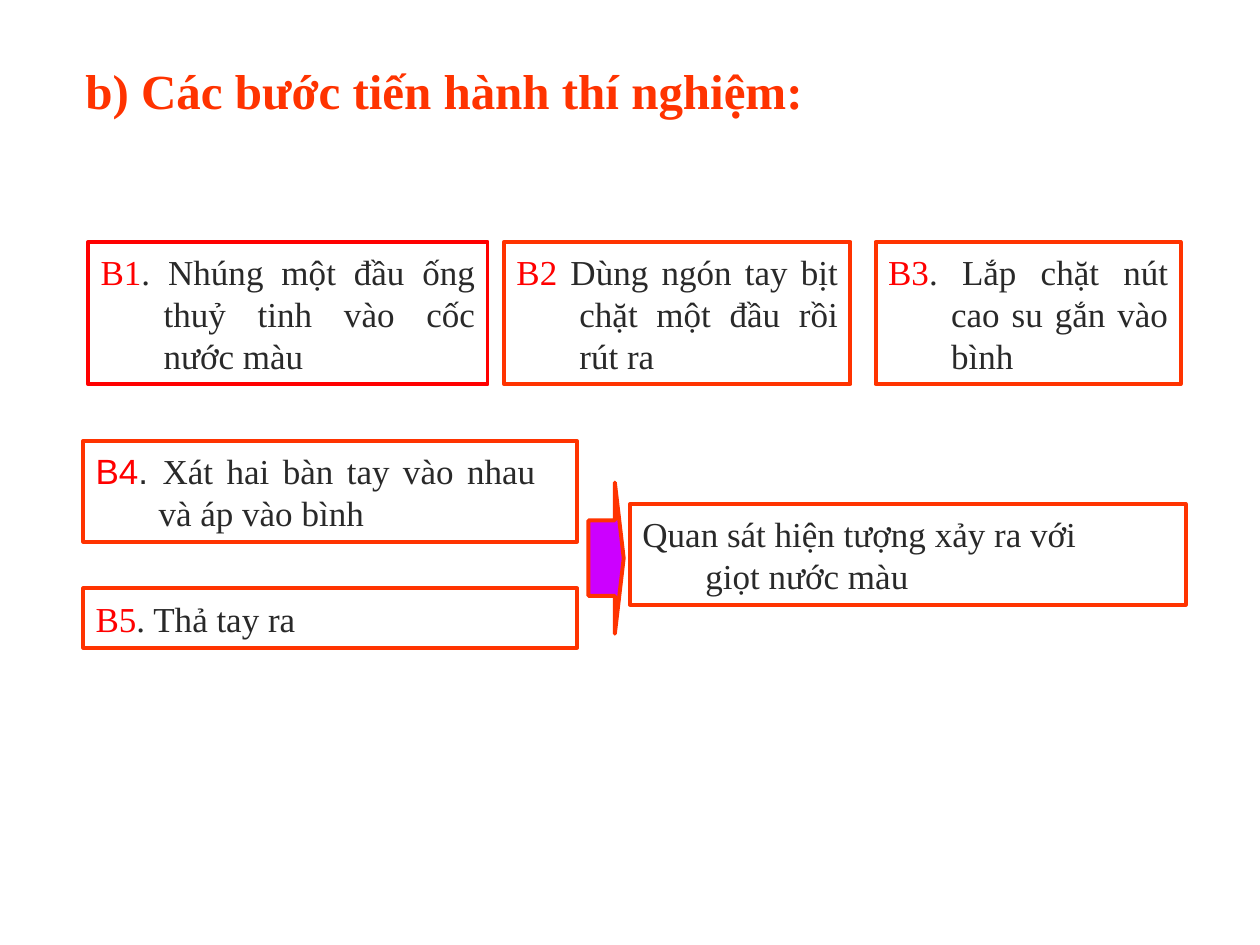
"""Build the slide listing the steps of the experiment."""
from pptx import Presentation
from pptx.dml.color import RGBColor
from pptx.enum.shapes import MSO_SHAPE as Shape
from pptx.enum.text import MSO_ANCHOR as Anchor, PP_ALIGN as Align
from pptx.util import Inches, Pt

RED = RGBColor(0xFF, 0x00, 0x00)
ORANGE = RGBColor(0xFF, 0x33, 0x00)
DARK = RGBColor(0x29, 0x29, 0x29)
PURPLE = RGBColor(0xCC, 0x00, 0xFF)
SERIF, SANS = "Times New Roman", "Arial"
PADDING, HANGING = 0.1, 0.5

TITLE = "b) Các bước tiến hành thí nghiệm:"
TOP, LEFT, STEP_WIDTH = 1.92, 0.66, 3.92
STEPS = [
    ((0.7, TOP, 3.17, 1.13), RED, Align.JUSTIFY, PADDING,
     [("B1", SERIF, RED), (". Nhúng một đầu ống thuỷ tinh vào cốc nước màu", SERIF, DARK)]),
    ((4, TOP, 2.75, 1.13), ORANGE, Align.JUSTIFY, PADDING,
     [("B2", SERIF, RED), (" Dùng ngón tay bịt chặt một đầu rồi rút ra", SERIF, DARK)]),
    ((6.95, TOP, 2.42, 1.13), ORANGE, Align.JUSTIFY, PADDING,
     [("B3", SERIF, RED), (". Lắp chặt nút cao su gắn vào bình", SERIF, DARK)]),
    ((LEFT, 3.5, STEP_WIDTH, 0.8), ORANGE, Align.JUSTIFY, 0.33,
     [("B4", SANS, RED), (". ", SANS, DARK), ("Xát hai bàn tay vào nhau và áp vào bình", SERIF, DARK)]),
    ((LEFT, 4.67, STEP_WIDTH, 0.47), ORANGE, Align.JUSTIFY, PADDING,
     [("B5", SERIF, RED), (". Thả tay ra", SERIF, DARK)]),
    ((5, 4, 4.41, 0.8), ORANGE, Align.LEFT, 0.6,
     [("Quan sát hiện tượng xảy ra với giọt nước màu", SERIF, DARK)]),
]
ARROW = (4.67, 3.83, 0.28, 1.2)


def add_span(para, text, font, size, color, bold=False):
    span = para.add_run()
    span.text = text
    span.font.name = font
    span.font.size = Pt(size)
    span.font.bold = bold
    span.font.color.rgb = color


def add_outlined(page, kind, place, line_color):
    shape = page.shapes.add_shape(kind, *map(Inches, place))
    shape.shadow.inherit = False
    shape.fill.background()
    shape.line.color.rgb = line_color
    shape.line.width = Pt(2.25)
    return shape


def add_step(page, place, line_color, align, right_padding, spans):
    box = add_outlined(page, Shape.RECTANGLE, place, line_color)
    frame = box.text_frame
    frame.word_wrap = True
    frame.vertical_anchor = Anchor.MIDDLE
    frame.margin_right = Inches(right_padding)
    para = frame.paragraphs[0]
    para.alignment = align
    properties = para._p.get_or_add_pPr()
    properties.set("marL", str(Inches(HANGING)))
    properties.set("indent", str(-Inches(HANGING)))
    for text, font, color in spans:
        add_span(para, text, font, 20, color)


def main():
    deck = Presentation()
    deck.slide_width, deck.slide_height = Inches(10), Inches(7.5)
    page = deck.slides.add_slide(deck.slide_layouts[6])
    for step in STEPS:
        add_step(page, *step)

    arrow = add_outlined(page, Shape.RIGHT_ARROW, ARROW, ORANGE)
    arrow.adjustments[0], arrow.adjustments[1] = 0.5, 0.25
    arrow.fill.solid()
    arrow.fill.fore_color.rgb = PURPLE

    title = page.shapes.add_textbox(*map(Inches, (0.58, 0.43, 9, 0.57)))
    title.text_frame.word_wrap = True
    add_span(title.text_frame.paragraphs[0], TITLE, SERIF, 28, ORANGE, bold=True)
    deck.save("out.pptx")


if __name__ == "__main__":
    main()
